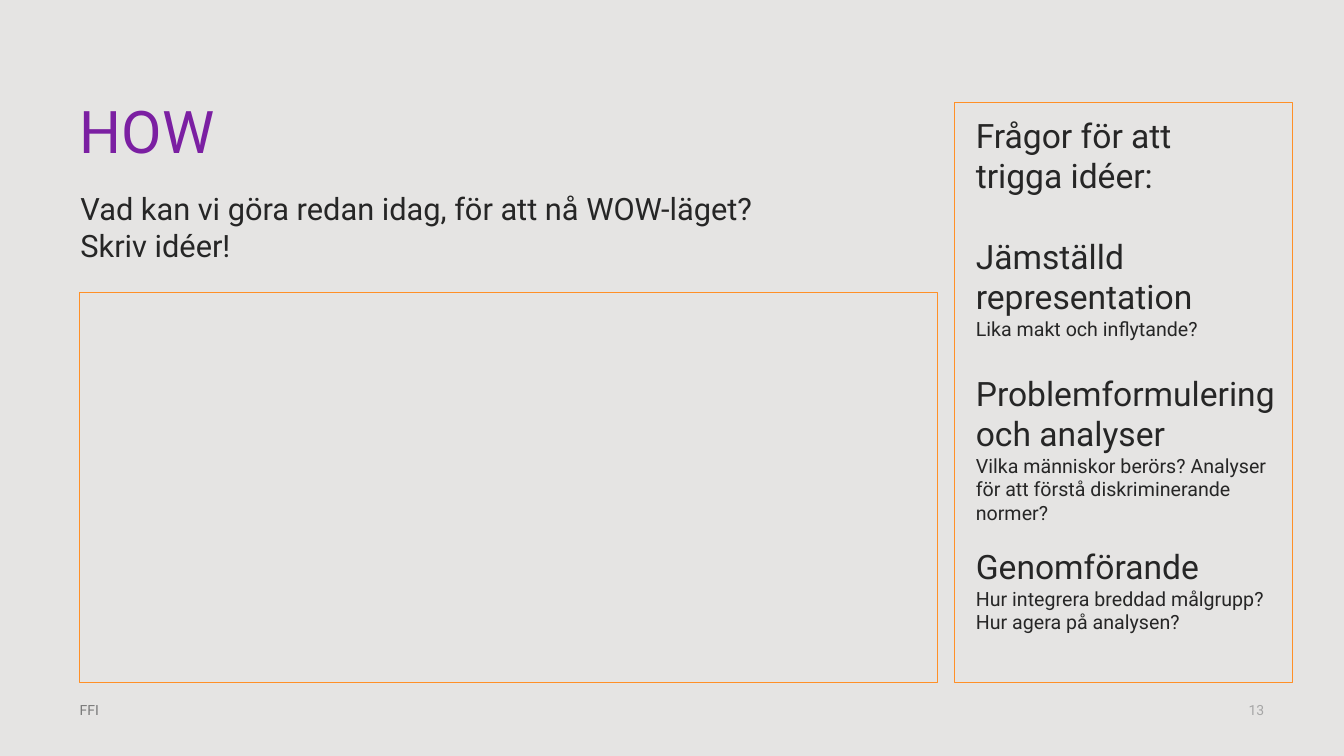
from pptx import Presentation
from pptx import util as u
from pptx.dml.color import RGBColor
from pptx.enum import shapes, text

FONT = "Roboto"
BACKGROUND, INK, PURPLE, ORANGE = "E5E4E3", "262626", "7B1FA2", "FF9027"
FOOTER_GREY, NUMBER_GREY = "797979", "A6A6A6"
MARGIN, PANEL_TOP, PANEL_BOTTOM = 5.93, 13.6, 90.27
QUESTION_LEFT, FOOTER_TOP = 71.87, 92.8


def colour(value):
    return RGBColor.from_string(value)


def set_all(target, values):
    for name, value in values.items():
        setattr(target, name, value)


class Sheet:
    """Current slide and its style; areas are percentages of the slide."""

    def __init__(self, deck):
        self.width, self.height = deck.slide_width, deck.slide_height
        self.slide = deck.slides.add_slide(deck.slide_layouts[5])
        fill = self.slide.background.fill
        fill.solid()
        fill.fore_color.rgb = colour(BACKGROUND)

    def area(self, left, top, width, height):
        return [int(share * full / 100) for share, full in zip(
            (left, top, width, height), (self.width, self.height) * 2)]

    def fill_frame(self, frame, lines, hue, inset=True, **paragraph_format):
        """Each line is (text, size) or (text, size, space before)."""
        set_all(frame, {"word_wrap": True, "auto_size": text.MSO_AUTO_SIZE.NONE,
                        "vertical_anchor": text.MSO_ANCHOR.TOP})
        if not inset:
            set_all(frame, {f"margin_{side}": 0
                            for side in ("left", "top", "right", "bottom")})
        for index, (words, size, *gap) in enumerate(lines):
            paragraph = frame.paragraphs[0] if index == 0 else frame.add_paragraph()
            paragraph.text = words
            set_all(paragraph, {"alignment": text.PP_ALIGN.LEFT, **paragraph_format})
            if gap:
                paragraph.space_before = u.Pt(gap[0])
            for run in paragraph.runs:
                set_all(run.font, {"name": FONT, "size": u.Pt(size)})
                run.font.color.rgb = colour(hue)

    def title(self, area, words, size):
        heading = self.slide.shapes.title
        set_all(heading, dict(zip(("left", "top", "width", "height"),
                                  self.area(*area))))
        self.fill_frame(heading.text_frame, [(words, size)], PURPLE,
                        inset=False, line_spacing=0.9)

    def text(self, area, lines, hue=INK, **options):
        box = self.slide.shapes.add_textbox(*self.area(*area))
        self.fill_frame(box.text_frame, lines, hue, **options)

    def panel(self, left, top, width):
        frame = self.slide.shapes.add_shape(
            shapes.MSO_SHAPE.RECTANGLE,
            *self.area(left, top, width, PANEL_BOTTOM - top))
        frame.shadow.inherit = False
        frame.fill.background()
        frame.line.color.rgb = colour(ORANGE)
        frame.line.width = u.Pt(1)


def main():
    deck = Presentation()
    deck.slide_width, deck.slide_height = u.Inches(13.33), u.Inches(7.5)
    sheet = Sheet(deck)

    # Heading and task
    sheet.title((MARGIN, PANEL_TOP, 88.22, 10.27), "HOW", 42)
    sheet.text((5.25, 24.4, 58.51, 13.5), [
        ("Vad kan vi göra redan idag, för att nå WOW-läget?", 22),
        ("Skriv idéer!", 22)])

    # Idea area and question panel
    sheet.panel(MARGIN, 38.67, 63.84)
    sheet.panel(71.04, PANEL_TOP, 25.13)

    # Questions: top, width, height, lines
    questions = [
        (14.53, 20.78, 33, [
            ("Frågor för att trigga idéer:", 24),
            ("Jämställd representation", 24, 29),
            ("Lika makt och inflytande?", 14)]),
        (48.67, 24.23, 22, [
            ("Problemformulering och analyser", 24),
            ("Vilka människor berörs? Analyser för att förstå "
             "diskriminerande normer?", 14)]),
        (71.6, 24.23, 17.07, [
            ("Genomförande", 24),
            ("Hur integrera breddad målgrupp?", 14),
            ("Hur agera på analysen?", 14)]),
    ]
    for top, width, height, lines in questions:
        sheet.text((QUESTION_LEFT, top, width, height), lines)

    # Footer
    sheet.text((MARGIN, FOOTER_TOP, 9.75, 2.27), [("FFI", 10)],
               FOOTER_GREY, inset=False)
    sheet.text((90.92, FOOTER_TOP, 3.15, 2.27), [("13", 10)],
               NUMBER_GREY, inset=False, alignment=text.PP_ALIGN.RIGHT)

    deck.save("out.pptx")


if __name__ == "__main__":
    main()
